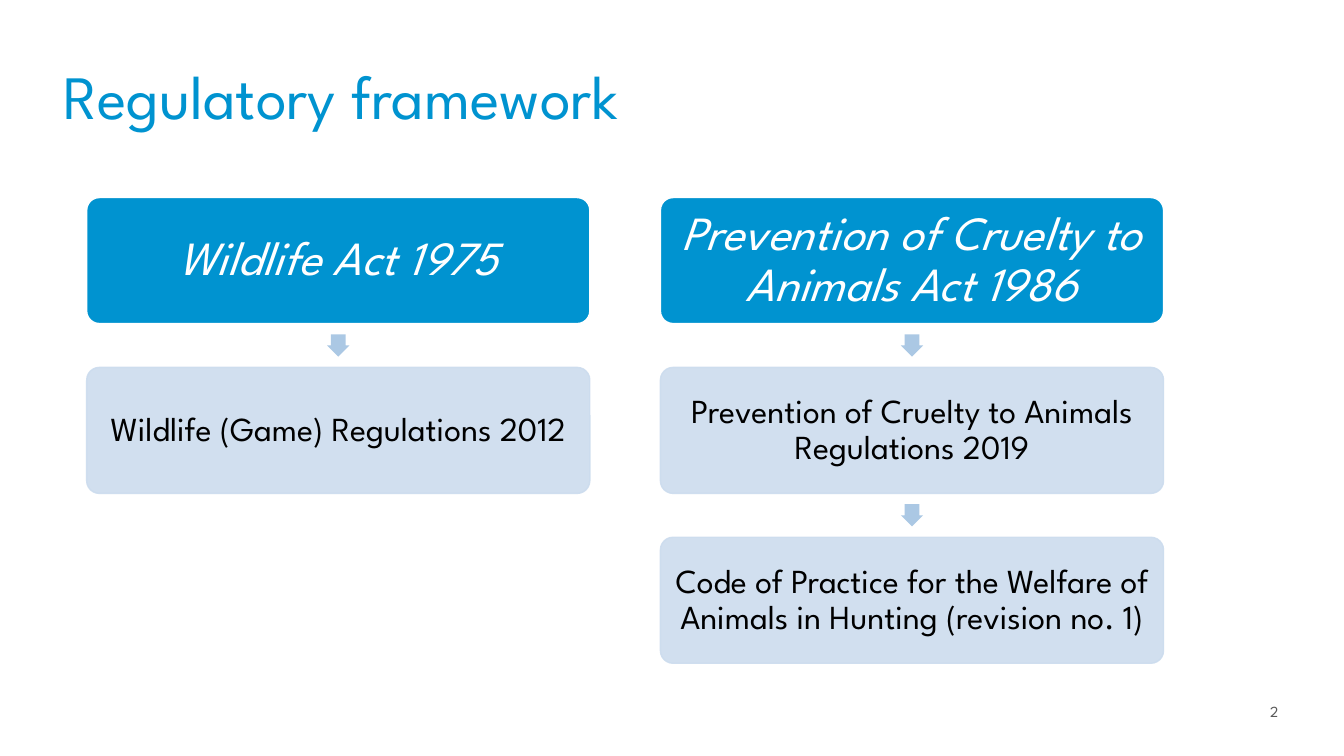
from dataclasses import dataclass

from lxml import etree
from pptx import Presentation
from pptx.dml.color import RGBColor
from pptx.enum.shapes import MSO_SHAPE as Preset
from pptx.enum.text import MSO_ANCHOR as Anchor, PP_ALIGN as Align
from pptx.oxml.ns import qn
from pptx.slide import Slide
from pptx.text.text import TextFrame
from pptx.util import Inches, Pt


@dataclass(frozen=True)
class Theme:
    font: str = "League Spartan"
    blue: str = "0093D0"
    pale: str = "CCDCEE"
    arrow: str = "ABC8E4"
    white: str = "FFFFFF"
    black: str = "000000"
    grey: str = "595959"
    title_size: int = 44
    act_size: int = 34
    rule_size: int = 24
    number_size: int = 11


@dataclass(frozen=True)
class BoxStyle:
    fill: str
    line: str
    text: str
    size: int
    inset: float
    italic: bool = False
    opacity: int = 100


@dataclass(frozen=True)
class Column:
    left: float
    act: str
    rules: tuple[str, ...]


THEME = Theme()
ACT = BoxStyle(THEME.blue, THEME.white, THEME.white, THEME.act_size, 0.08, italic=True)
RULE = BoxStyle(THEME.pale, THEME.pale, THEME.black, THEME.rule_size, 0.06, opacity=90)

COLUMNS = (
    Column(0.86, "Wildlife Act 1975", ("Wildlife (Game) Regulations 2012",)),
    Column(6.55, "Prevention of Cruelty to Animals Act 1986", (
        "Prevention of Cruelty to Animals Regulations 2019",
        "Code of Practice for the Welfare of Animals in Hunting (revision no. 1)",
    )),
)

FIRST_TOP, ROW_STEP = 1.96, 1.685
BOX_WIDTH, BOX_HEIGHT = 4.99, 1.25
ARROW_SIZE = 0.22


def write_text(frame: TextFrame, text: str, size: int, color: str,
               align: Align = Align.LEFT, spacing: float = 1.0,
               italic: bool = False) -> None:
    frame.word_wrap = True
    frame.text = text
    paragraph = frame.paragraphs[0]
    paragraph.alignment = align
    paragraph.line_spacing = spacing
    font = paragraph.runs[0].font
    font.name = THEME.font
    font.size = Pt(size)
    font.italic = italic
    font.color.rgb = RGBColor.from_string(color)


def add_box(slide: Slide, left: float, top: float, text: str, style: BoxStyle) -> None:
    shape = slide.shapes.add_shape(Preset.ROUNDED_RECTANGLE, Inches(left), Inches(top),
                                   Inches(BOX_WIDTH), Inches(BOX_HEIGHT))
    shape.shadow.inherit = False
    shape.adjustments[0] = 0.1
    shape.fill.solid()
    shape.fill.fore_color.rgb = RGBColor.from_string(style.fill)
    shape.line.color.rgb = RGBColor.from_string(style.line)
    shape.line.width = Pt(1)
    if style.opacity < 100:
        # Fill and outline share the same transparency
        for color in shape._element.spPr.iter(qn("a:srgbClr")):
            etree.SubElement(color, qn("a:alpha")).set("val", str(style.opacity * 1000))
    frame = shape.text_frame
    frame.margin_left = frame.margin_right = Inches(style.inset)
    frame.margin_top = frame.margin_bottom = Inches(style.inset)
    frame.vertical_anchor = Anchor.MIDDLE
    write_text(frame, text, style.size, style.text, Align.CENTER, 0.9, style.italic)


def add_arrow(slide: Slide, column_left: float, box_top: float) -> None:
    """Centre a down-pointing arrow in the gap above a box."""
    left = column_left + (BOX_WIDTH - ARROW_SIZE) / 2
    gap = ROW_STEP - BOX_HEIGHT
    top = box_top - (gap + ARROW_SIZE) / 2
    shape = slide.shapes.add_shape(Preset.RIGHT_ARROW, Inches(left), Inches(top),
                                   Inches(ARROW_SIZE), Inches(ARROW_SIZE))
    shape.rotation = 90
    shape.adjustments[0] = 0.667
    shape.adjustments[1] = 0.5
    shape.shadow.inherit = False
    shape.fill.solid()
    shape.fill.fore_color.rgb = RGBColor.from_string(THEME.arrow)
    shape.line.fill.background()


def add_column(slide: Slide, column: Column) -> None:
    add_box(slide, column.left, FIRST_TOP, column.act, ACT)
    for row, rule in enumerate(column.rules, start=1):
        top = FIRST_TOP + row * ROW_STEP
        add_arrow(slide, column.left, top)
        add_box(slide, column.left, top, rule, RULE)


def main() -> None:
    presentation = Presentation()
    presentation.slide_width = Inches(13.33)
    presentation.slide_height = Inches(7.5)
    slide = presentation.slides.add_slide(presentation.slide_layouts[6])

    # Title
    title = slide.shapes.add_textbox(Inches(0.53), Inches(0.61), Inches(7.82), Inches(0.74))
    write_text(title.text_frame, "Regulatory framework", THEME.title_size, THEME.blue,
               spacing=0.9)

    # Acts with the rules made under them
    for column in COLUMNS:
        add_column(slide, column)

    # Slide number
    number = slide.shapes.add_textbox(Inches(12.02), Inches(6.92), Inches(0.76), Inches(0.29))
    write_text(number.text_frame, "2", THEME.number_size, THEME.grey, Align.RIGHT)

    presentation.save("out.pptx")


if __name__ == "__main__":
    main()
